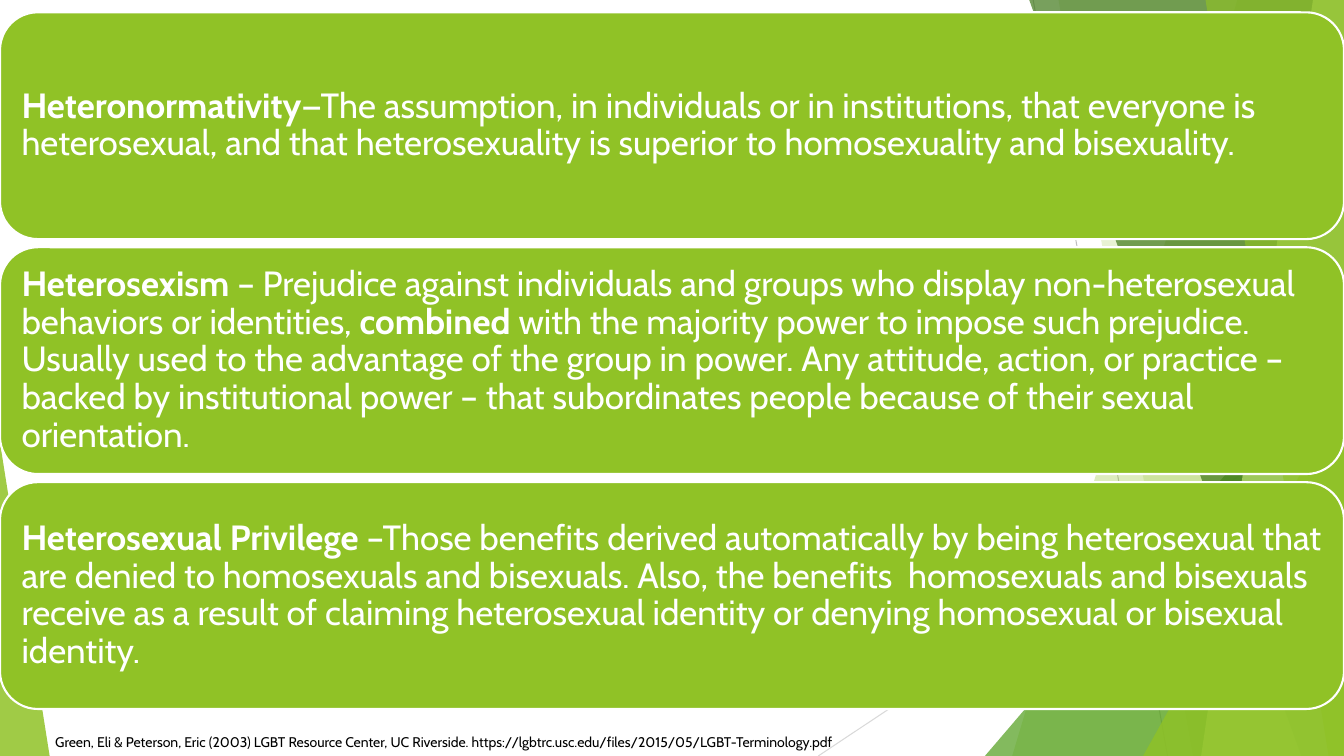
import pptx
import pptx.util
import pptx.dml.color
import pptx.enum.shapes
import pptx.enum.text
import pptx.oxml.ns
import lxml.etree
from dataclasses import dataclass

Pt = pptx.util.Pt
WIDTH, HEIGHT = 960, 540


@dataclass(frozen=True)
class Theme:
    font: str = "Cabin"
    definition_size: float = 25
    citation_size: float = 10
    white: str = "FFFFFF"
    black: str = "000000"
    lime: str = "90C226"
    green: str = "54A021"
    forest: str = "3F7819"
    pale: str = "C0E474"
    grey: str = "BFBFBF"
    light_grey: str = "D9D9D9"


class SlideBuilder:
    def __init__(self, slide, theme):
        self.slide = slide
        self.theme = theme

    def color(self, value):
        return pptx.dml.color.RGBColor.from_string(value)

    def paint(self, shape, color, opacity=100):
        shape.shadow.inherit = False
        shape.fill.solid()
        shape.fill.fore_color.rgb = self.color(color)
        shape.line.fill.background()
        if opacity < 100:
            value = shape.fill._xPr.find(".//" + pptx.oxml.ns.qn("a:srgbClr"))
            alpha = lxml.etree.SubElement(value, pptx.oxml.ns.qn("a:alpha"))
            alpha.set("val", str(opacity * 1000))

    def line(self, start, end, color):
        connector = self.slide.shapes.add_connector(
            pptx.enum.shapes.MSO_CONNECTOR.STRAIGHT, *map(Pt, start + end))
        connector.line.color.rgb = self.color(color)
        connector.line.width = Pt(0.75)
        lxml.etree.SubElement(connector._element.spPr, pptx.oxml.ns.qn("a:effectLst"))

    def facet(self, top_x, bottom_x, color, opacity):
        """Four-sided panel that reaches the right edge of the slide."""
        top = -0.6
        builder = self.slide.shapes.build_freeform(Pt(top_x), Pt(top))
        corners = [(WIDTH, top), (WIDTH, HEIGHT), (bottom_x, HEIGHT)]
        builder.add_line_segments([(Pt(x), Pt(y)) for x, y in corners], close=True)
        self.paint(builder.convert_to_shape(), color, opacity)

    def triangle(self, left, top, width, apex, color, opacity):
        """Triangle standing on the bottom edge of the slide."""
        shape = self.slide.shapes.add_shape(
            pptx.enum.shapes.MSO_SHAPE.ISOSCELES_TRIANGLE,
            Pt(left), Pt(top), Pt(width), Pt(HEIGHT - top))
        shape.adjustments[0] = apex
        self.paint(shape, color, opacity)

    def style(self, paragraph, size, color):
        paragraph.alignment = pptx.enum.text.PP_ALIGN.LEFT
        paragraph.font.name = self.theme.font
        paragraph.font.size = Pt(size)
        paragraph.font.color.rgb = self.color(color)

    def definition(self, top, height, runs):
        """Rounded band; runs alternate between bold and regular."""
        shape = self.slide.shapes.add_shape(
            pptx.enum.shapes.MSO_SHAPE.ROUNDED_RECTANGLE, 0, Pt(top), Pt(WIDTH), Pt(height))
        self.paint(shape, self.theme.lime)
        shape.line.color.rgb = self.color(self.theme.white)
        shape.line.width = Pt(1.5)
        frame = shape.text_frame
        frame.word_wrap = True
        frame.vertical_anchor = pptx.enum.text.MSO_ANCHOR.MIDDLE
        frame.margin_left = frame.margin_right = Pt(7.5)
        frame.margin_top = frame.margin_bottom = Pt(7.5)
        paragraph = frame.paragraphs[0]
        paragraph.line_spacing = 0.9
        self.style(paragraph, self.theme.definition_size, self.theme.white)
        for index, text in enumerate(runs):
            run = paragraph.add_run()
            run.text = text
            run.font.bold = index % 2 == 0

    def citation(self, left, top, width, height, text):
        box = self.slide.shapes.add_textbox(Pt(left), Pt(top), Pt(width), Pt(height))
        box.text_frame.word_wrap = True
        paragraph = box.text_frame.paragraphs[0]
        paragraph.text = text
        self.style(paragraph, self.theme.citation_size, self.theme.black)


DEFINITIONS = [
    ("Heteronormativity",
     "—The assumption, in individuals or in institutions, that everyone is heterosexual, "
     "and that heterosexuality is superior to homosexuality and bisexuality."),
    ("Heterosexism",
     " – Prejudice against individuals and groups who display non-heterosexual behaviors "
     "or identities, ",
     "combined",
     " with the majority power to impose such prejudice. Usually used to the advantage of "
     "the group in power. Any attitude, action, or practice – backed by institutional "
     "power – that subordinates people because of their sexual orientation."),
    ("Heterosexual Privilege ",
     "–Those benefits derived automatically by being heterosexual that are denied to "
     "homosexuals and bisexuals. Also, the benefits  homosexuals and bisexuals receive as "
     "a result of claiming heterosexual identity or denying homosexual or bisexual identity."),
]


def main():
    presentation = pptx.Presentation()
    presentation.slide_width, presentation.slide_height = Pt(WIDTH), Pt(HEIGHT)
    theme = Theme()
    builder = SlideBuilder(
        presentation.slides.add_slide(presentation.slide_layouts[6]), theme)

    # Backdrop of thin lines and translucent facets
    builder.line((738, 0), (834, HEIGHT), theme.grey)
    builder.line((WIDTH, 290), (584.5, HEIGHT), theme.light_grey)
    builder.facet(884, 723, theme.lime, 30)
    builder.facet(756, 852, theme.lime, 20)
    builder.triangle(703.5, 240, 256.5, 1, theme.green, 72)
    builder.facet(735, 929.5, theme.forest, 70)
    builder.facet(938, 858, theme.pale, 70)
    builder.facet(861, 949, theme.lime, 65)
    builder.triangle(816.5, 283, 143.5, 1, theme.lime, 80)
    builder.triangle(0, 316, 35.5, 0, theme.lime, 85)

    # Definition bands
    first_top, band_height, gap = 8.8, 162, 5.8
    for index, runs in enumerate(DEFINITIONS):
        builder.definition(first_top + index * (band_height + gap), band_height, runs)

    # Source citation
    builder.citation(
        32.4, 520.6, 662, 19.4,
        "Green, Eli & Peterson, Eric (2003) LGBT Resource Center, UC Riverside. "
        "https://lgbtrc.usc.edu/files/2015/05/LGBT-Terminology.pdf")

    presentation.save("out.pptx")


if __name__ == "__main__":
    main()
